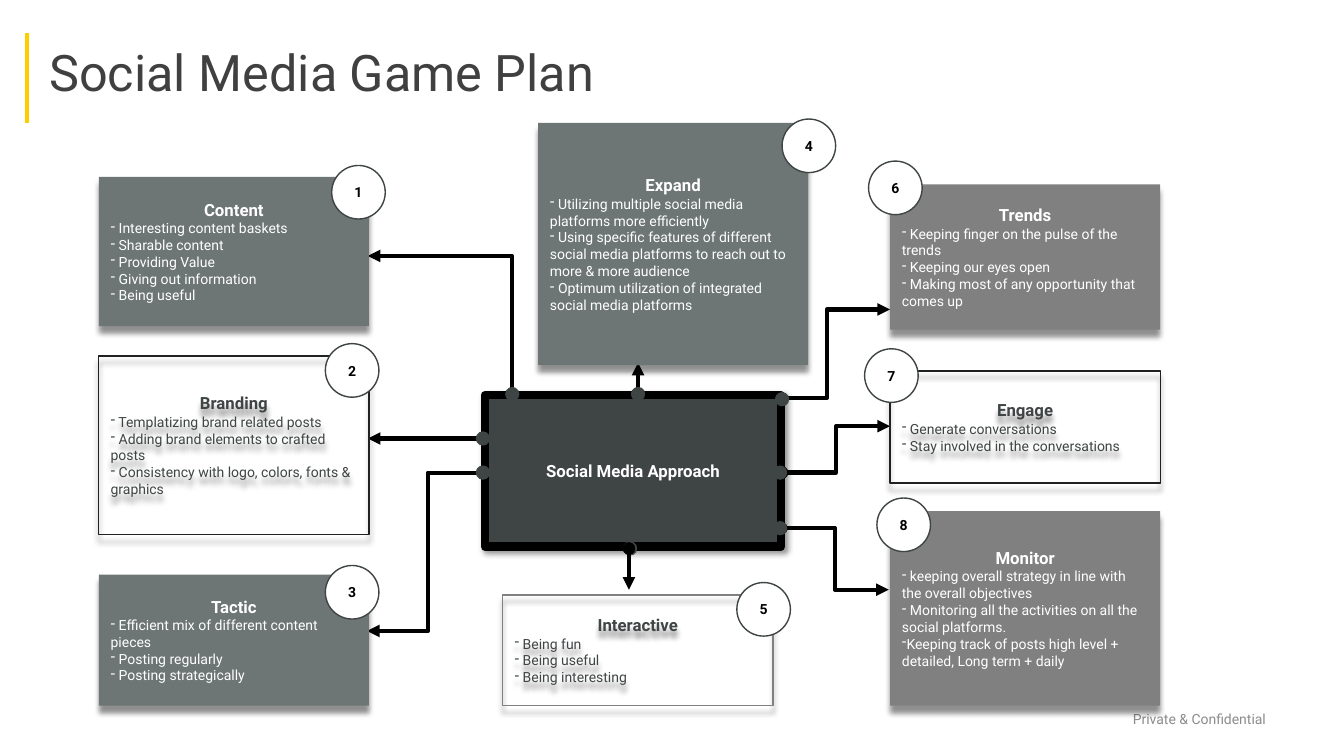
from lxml import etree
from pptx import Presentation
from pptx import util as u
from pptx.dml.color import RGBColor
from pptx.enum import shapes, text
from pptx.oxml import ns

FONT = "Roboto"
COLORS = {
    "accent": "FFCC00", "title": "404040", "footer": "8C8C8C",
    "slate": "6D7575", "gray": "808080", "dark": "3F4444",
    "outline": "202222", "black": "000000", "white": "FFFFFF",
}
CARD_WIDTH, DOT_SIZE, BADGE_SIZE = 6.81, 0.36, 1.35
LEFT, RIGHT = 2.49, 22.43

# heading, left, top, height, fill, outline, bullet texts
CARDS = [
    ("Trends", RIGHT, 4.65, 3.66, "gray", None,
     [" Keeping finger on the pulse of the trends", " Keeping our eyes open",
      " Making most of any opportunity that comes up"]),
    ("Content", LEFT, 4.46, 3.76, "slate", None,
     [" Interesting content baskets", " Sharable content", " Providing Value",
      " Giving out information", " Being useful"]),
    ("Branding", LEFT, 8.97, 4.5, None, "outline",
     [" Templatizing brand related posts", " Adding brand elements to crafted posts",
      " Consistency with logo, colors, fonts & graphics"]),
    ("Expand", 13.56, 3.1, 6.1, "slate", None,
     [" Utilizing multiple social media platforms more efficiently",
      " Using specific features of different social media platforms"
      " to reach out to more & more audience",
      " Optimum utilization of integrated social media platforms"]),
    ("Tactic", LEFT, 14.48, 3.3, "slate", None,
     [" Efficient mix of different content pieces", " Posting regularly",
      " Posting strategically"]),
    ("Engage", RIGHT, 9.35, 2.82, None, "outline",
     [" Generate conversations", " Stay involved in the conversations"]),
    ("Interactive", 12.67, 14.99, 2.79, None, "gray",
     [" Being fun", " Being useful", " Being interesting"]),
    ("Monitor", RIGHT, 12.88, 4.9, "gray", None,
     [" keeping overall strategy in line with the overall objectives",
      " Monitoring all the activities on all the social platforms.",
      "Keeping track of posts high level + detailed, Long term + daily"]),
]
# start and end points of the arrows that lie behind the cards
ARROWS = [
    ((19.71, 11.91), (22.43, 10.74)), ((19.69, 13.31), (22.4, 14.86)),
    ((12.32, 11.91), (9.25, 15.9)), ((12.22, 11.05), (9.27, 11.05)),
    ((16.08, 10.19), (16.08, 9.14)), ((19.25, 10.03), (22.43, 7.8)),
]
DOTS = [(15.9, 9.75), (19.53, 9.88), (19.48, 11.73), (19.48, 13.13),
        (11.99, 10.87), (12.73, 9.75), (11.99, 11.73), (15.7, 13.64)]
BADGES = [(8.36, 4.17), (8.2, 8.66), (8.2, 14.25), (19.71, 3.0),
          (18.57, 14.68), (21.89, 4.06), (21.79, 8.79), (22.1, 12.55)]


def rgb(name):
    return RGBColor.from_string(COLORS[name])


def add_xml(parent, tag, **attributes):
    return etree.SubElement(parent, ns.qn(tag), attributes)


def add_span(para, words, size, color, bold=False):
    span = para.add_run()
    span.text = words
    span.font.name = FONT
    span.font.size = u.Pt(size)
    span.font.bold = bold
    span.font.color.rgb = rgb(color)


def add_dash(para):
    """Give the paragraph a dash bullet without indent."""
    properties = para._p.get_or_add_pPr()
    properties.set("marL", "0")
    properties.set("indent", "0")
    add_xml(properties, "a:buChar", char="-")


def add_shadow(shape, opacity, blur, distance, angle):
    effects = shape._element.spPr.find(ns.qn("a:effectLst"))
    shadow = add_xml(effects, "a:outerShdw", blurRad=str(u.Pt(blur)),
                     dist=str(u.Pt(distance)), dir=str(angle * 60000),
                     algn="ctr", rotWithShape="0")
    color = add_xml(shadow, "a:srgbClr", val=COLORS["black"])
    add_xml(color, "a:alpha", val=str(opacity * 1000))


def add_box(page, kind, left, top, width, height, fill=None, outline=None, weight=1):
    box = page.shapes.add_shape(kind, u.Cm(left), u.Cm(top), u.Cm(width), u.Cm(height))
    box.shadow.inherit = False
    if fill:
        box.fill.solid()
        box.fill.fore_color.rgb = rgb(fill)
    else:
        box.fill.background()
    if outline:
        box.line.color.rgb = rgb(outline)
        box.line.width = u.Pt(weight)
    else:
        box.line.fill.background()
    frame = box.text_frame
    frame.word_wrap = True
    frame.vertical_anchor = text.MSO_ANCHOR.MIDDLE
    frame.margin_left = frame.margin_right = u.Cm(0.3)
    frame.margin_top = frame.margin_bottom = u.Cm(0.15)
    return box


def add_label(box, words, size, color):
    para = box.text_frame.paragraphs[0]
    para.alignment = text.PP_ALIGN.CENTER
    add_span(para, words, size, color, bold=True)


def add_card(page, heading, left, top, height, fill, outline, points):
    box = add_box(page, shapes.MSO_SHAPE.RECTANGLE, left, top, CARD_WIDTH, height,
                  fill, outline)
    add_shadow(box, 43, 4, 5, 90)
    color = "white" if fill else "dark"
    add_label(box, heading, 12, color)
    for point in points:
        para = box.text_frame.add_paragraph()
        para.alignment = text.PP_ALIGN.LEFT
        add_dash(para)
        add_span(para, point, 10, color)


def add_line(page, start, end, color="black", head=None, tail=None):
    """Draw a straight line, or an elbow where the ends share no axis."""
    straight = start[0] == end[0] or start[1] == end[1]
    kind = shapes.MSO_CONNECTOR.STRAIGHT if straight else shapes.MSO_CONNECTOR.ELBOW
    line = page.shapes.add_connector(kind, *map(u.Cm, start + end))
    line.line.color.rgb = rgb(color)
    line.line.width = u.Pt(3)
    properties = line._element.spPr
    for tag, marker in (("a:headEnd", head), ("a:tailEnd", tail)):
        if marker:
            add_xml(properties.find(ns.qn("a:ln")), tag, type=marker)
    add_xml(properties, "a:effectLst")
    return line


def add_title(page, words):
    title = page.shapes.title
    title.left, title.top, title.width, title.height = map(u.Cm, (0.99, 0.74, 23.93, 2.29))
    title.text_frame.vertical_anchor = text.MSO_ANCHOR.MIDDLE
    para = title.text_frame.paragraphs[0]
    para.alignment = text.PP_ALIGN.LEFT
    para.line_spacing = 0.9
    add_span(para, words, 36, "title")


def add_footer(page, words):
    box = page.shapes.add_textbox(*map(u.Cm, (28.3, 17.78, 4.04, 0.69)))
    box.text_frame.vertical_anchor = text.MSO_ANCHOR.MIDDLE
    add_span(box.text_frame.paragraphs[0], words, 10, "footer")


def main():
    deck = Presentation()
    deck.slide_width, deck.slide_height = u.Cm(33.87), u.Cm(19.05)
    page = deck.slides.add_slide(deck.slide_layouts.get_by_name("Title Only"))
    add_line(page, (0.69, 0.84), (0.69, 3.1), "accent")
    add_footer(page, "Private & Confidential")
    add_title(page, "Social Media Game Plan")

    for start, end in ARROWS:
        add_line(page, start, end, head="oval", tail="triangle")
    # A single-bend elbow leaves sideways, so this one starts at the Content card.
    corner = add_line(page, (9.27, 6.45), (12.9, 10.52), head="triangle", tail="oval")
    corner._element.spPr.find(ns.qn("a:prstGeom")).set("prst", "bentConnector2")

    for card in CARDS:
        add_card(page, *card)
    hub = add_box(page, shapes.MSO_SHAPE.RECTANGLE, 12.22, 9.96, 7.47, 3.81,
                  "dark", "black", 6)
    add_shadow(hub, 40, 4, 3, 45)
    add_label(hub, "Social Media Approach", 12, "white")

    for left, top in DOTS:
        add_box(page, shapes.MSO_SHAPE.OVAL, left, top, DOT_SIZE, DOT_SIZE, "dark")
    add_line(page, (15.85, 13.82), (15.85, 14.86), head="oval", tail="triangle")
    for number, (left, top) in enumerate(BADGES, 1):
        badge = add_box(page, shapes.MSO_SHAPE.OVAL, left, top, BADGE_SIZE, BADGE_SIZE,
                        "white", "dark")
        add_label(badge, str(number), 10, "black")
    deck.save("out.pptx")


if __name__ == "__main__":
    main()
